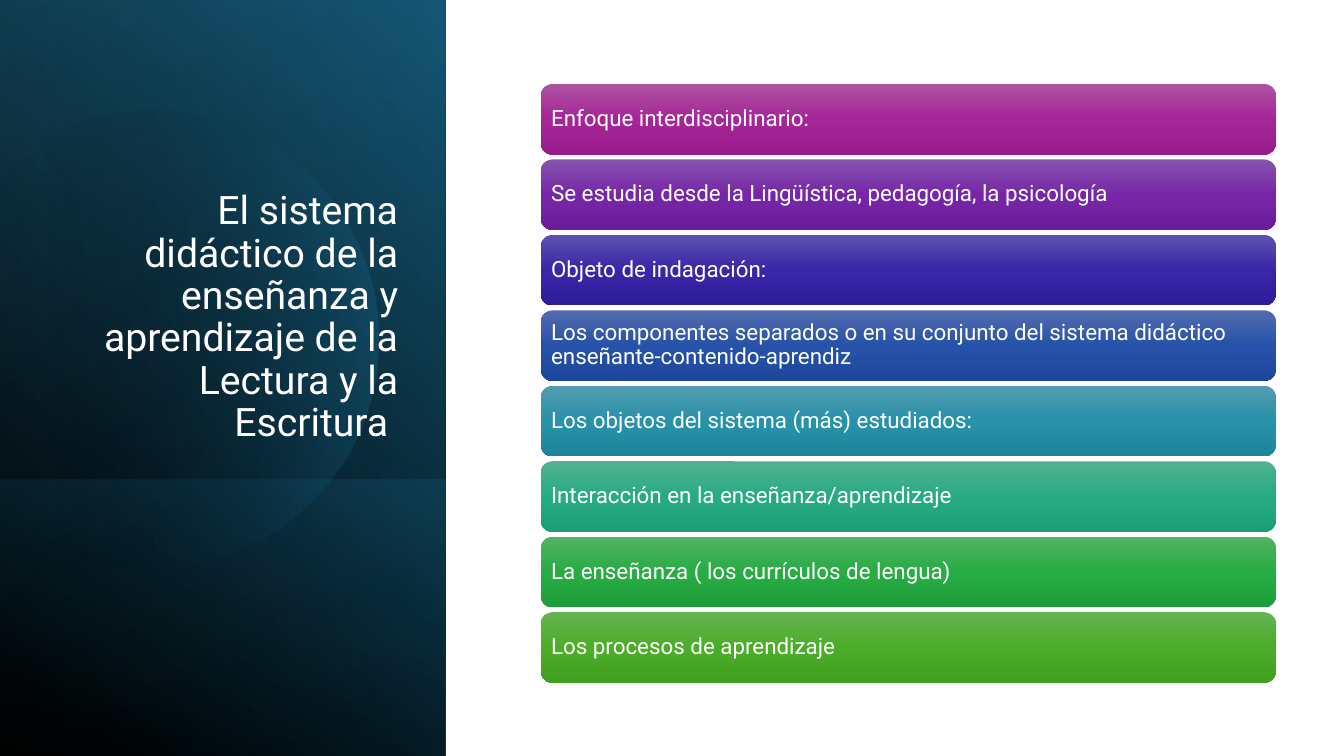
from pptx import Presentation
from pptx.dml.color import RGBColor as Rgb
from pptx.enum.shapes import MSO_SHAPE as Shape
from pptx.enum.text import MSO_ANCHOR as Anchor, MSO_AUTO_SIZE as Fit, PP_ALIGN as Align
from pptx.oxml import parse_xml
from pptx.oxml.ns import nsdecls, qn
from pptx.util import Pt

TITLE = "El sistema didáctico de la enseñanza y aprendizaje de la Lectura y la Escritura "

# Text, then the top, middle and bottom colour of each bar
BARS = [
    ("Enfoque interdisciplinario:", "AC53A0", "A62598", "991C8B"),
    ("Se estudia desde la Lingüística, pedagogía, la psicología", "8653AD", "7726A7", "6B1C9A"),
    ("Objeto de indagación:", "5C53AE", "3926A8", "2F1C9A"),
    ("Los componentes separados o en su conjunto del sistema didáctico "
     "enseñante-contenido-aprendiz", "536BAF", "2652A9", "1D479B"),
    ("Los objetos del sistema (más) estudiados:", "539CB0", "2792AA", "1D859C"),
    ("Interacción en la enseñanza/aprendizaje", "53B190", "27AB83", "1D9D77"),
    ("La enseñanza ( los currículos de lengua)", "54B262", "28AC44", "1E9E3A"),
    ("Los procesos de aprendizaje", "66B354", "4BAD28", "409F1E"),
]


class Theme:
    font = "Roboto"
    text = "FFFFFF"
    dark, deep, blue, sky = "000000", "104862", "156082", "46B1E1"
    title, body = 28, 16


SIDE = 318
HIGH = 540
FOOT = 197.3
# Top, height, angle, then stops of (place %, colour, opacity %)
BASE = (0, HIGH, 310, [(8, Theme.dark, 100), (100, Theme.deep, 100)])
SHADE = (0, HIGH, 330, [(0, Theme.dark, 0), (99, Theme.blue, 46)])
LOW = (HIGH - FOOT, FOOT, 110, [(2, Theme.blue, 29), (100, Theme.dark, 30)])
GLOW = (0, HIGH, 240, [(0, Theme.dark, 0), (99, Theme.sky, 11)])
DISC = (107.3, 242.6, 163.4)
DISC_STOPS = [(29, Theme.dark, 0), (100, Theme.blue, 43)]
CUT = 136
LEFT, TOP, WIDE, TALL, STEP = 386.3, 60, 525, 50.4, 53.9


def paint(shape, stops, angle):
    """Give the shape a linear gradient, no line and no shadow."""
    marks = "".join(
        f'<a:gs pos="{place * 1000}"><a:srgbClr val="{color}">'
        f'<a:alpha val="{alpha * 1000}"/></a:srgbClr></a:gs>'
        for place, color, alpha in stops)
    grad = parse_xml(
        f'<a:gradFill {nsdecls("a")}><a:gsLst>{marks}</a:gsLst>'
        f'<a:lin ang="{angle * 60000}" scaled="0"/></a:gradFill>')
    shape.shadow.inherit = False
    shape.line.fill.background()
    shape.fill.background()
    props = shape._element.spPr
    props.replace(props.find(qn("a:noFill")), grad)


def write(shape, text, size, align=Align.LEFT, anchor=Anchor.MIDDLE, inset=(7.2, 3.6)):
    frame = shape.text_frame
    frame.text = text
    frame.word_wrap = True
    frame.auto_size = Fit.NONE
    frame.vertical_anchor = anchor
    frame.margin_left = frame.margin_right = Pt(inset[0])
    frame.margin_top = frame.margin_bottom = Pt(inset[1])
    para = frame.paragraphs[0]
    para.alignment = align
    para.line_spacing = 0.9
    font = para.runs[0].font
    font.name = Theme.font
    font.size = Pt(size)
    font.color.rgb = Rgb.from_string(Theme.text)


def add_panel(shapes, top, tall, angle, stops):
    panel = shapes.add_shape(Shape.RECTANGLE, 0, Pt(top), Pt(SIDE), Pt(tall))
    paint(panel, stops, angle)


def add_disc(shapes):
    """Add the circle that is cut off straight on its left."""
    x, y, r = DISC
    disc = shapes.add_shape(Shape.CHORD, Pt(x - r), Pt(y - r), Pt(2 * r), Pt(2 * r))
    for i, angle in enumerate((360 - CUT, CUT)):
        disc.adjustments[i] = angle * 0.6  # 60000 units a degree, scaled by 100000
    paint(disc, DISC_STOPS, 358)


def add_bar(shapes, row, text, *colors):
    bar = shapes.add_shape(
        Shape.ROUNDED_RECTANGLE, Pt(LEFT), Pt(TOP + row * STEP), Pt(WIDE), Pt(TALL))
    paint(bar, [(i * 50, color, 100) for i, color in enumerate(colors)], 90)
    write(bar, text, Theme.body, inset=(4.9, 5))


def main():
    deck = Presentation()
    deck.slide_width, deck.slide_height = Pt(960), Pt(HIGH)
    slide = deck.slides.add_slide(deck.slide_layouts[5])
    shapes = slide.shapes

    for panel in (BASE, SHADE, LOW):
        add_panel(shapes, *panel)
    add_disc(shapes)
    add_panel(shapes, *GLOW)

    title = shapes.title
    title.left, title.top, title.width, title.height = Pt(46), Pt(132.8), Pt(245.5), Pt(188.6)
    write(title, TITLE, Theme.title, align=Align.RIGHT, anchor=Anchor.BOTTOM)
    shapes._spTree.append(title._element)  # in front of the panels

    for row, bar in enumerate(BARS):
        add_bar(shapes, row, *bar)
    deck.save("out.pptx")


if __name__ == "__main__":
    main()
